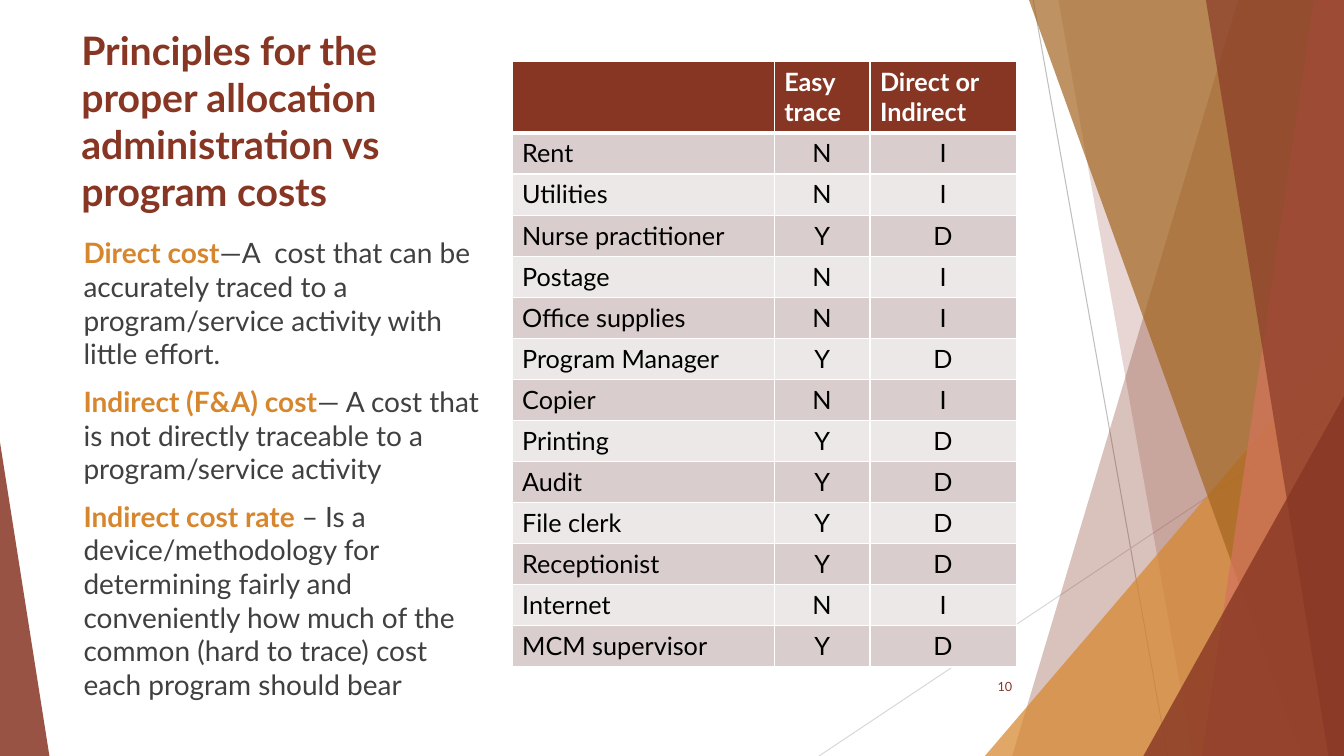
from dataclasses import dataclass

from lxml.etree import SubElement
from pptx import Presentation
from pptx.dml.color import RGBColor
from pptx.enum.shapes import MSO_CONNECTOR, MSO_SHAPE
from pptx.enum.text import MSO_ANCHOR, PP_ALIGN
from pptx.oxml.ns import qn
from pptx.util import Pt


@dataclass(frozen=True)
class Theme:
    """Colours, font and type sizes of the slide."""
    font: str = "Lato"
    brick: str = "873624"
    amber: str = "D6862D"
    bronze: str = "A36520"
    coral: str = "D4745E"
    text: str = "404040"
    black: str = "000000"
    white: str = "FFFFFF"
    odd_row: str = "D9CECD"
    even_row: str = "EDE8E8"
    steep_line: str = "BFBFBF"
    shallow_line: str = "D9D9D9"
    title_size: int = 28
    body_size: int = 20
    table_size: int = 18
    number_size: int = 9


@dataclass(frozen=True)
class Box:
    """A region of the slide in points."""
    left: float
    top: float
    width: float
    height: float

    @property
    def right(self):
        """Return the right edge."""
        return self.left + self.width

    @property
    def bottom(self):
        """Return the bottom edge."""
        return self.top + self.height

    def lengths(self):
        """Return the box as slide lengths."""
        return [Pt(value) for value in (self.left, self.top, self.width, self.height)]


THEME = Theme()
TITLE = "Principles for the proper allocation administration vs program costs"
DEFINITIONS = [
    ("Direct cost", "—A  cost that can be accurately traced to a program/service activity with little effort."),
    ("Indirect (F&A) cost", "— A cost that is not directly traceable to a program/service activity"),
    ("Indirect cost rate ", "– Is a device/methodology for determining fairly and conveniently how much "
     "of the common (hard to trace) cost each program should bear"),
]
HEADINGS = ["", "Easy\ntrace", "Direct or\nIndirect"]
COSTS = [
    ("Rent", "N", "I"), ("Utilities", "N", "I"), ("Nurse practitioner", "Y", "D"),
    ("Postage", "N", "I"), ("Office supplies", "N", "I"), ("Program Manager", "Y", "D"),
    ("Copier", "N", "I"), ("Printing", "Y", "D"), ("Audit", "Y", "D"), ("File clerk", "Y", "D"),
    ("Receptionist", "Y", "D"), ("Internet", "N", "I"), ("MCM supervisor", "Y", "D"),
]


def set_values(target, values):
    """Set each named attribute of the target."""
    for name, value in values.items():
        setattr(target, name, value)


def add_run(paragraph, text, size, color, bold=False):
    """Add one formatted run to a paragraph."""
    run = paragraph.add_run()
    set_values(run, {"text": text})
    set_values(run.font, {"name": THEME.font, "size": Pt(size), "bold": bold})
    run.font.color.rgb = RGBColor.from_string(color)


def add_text_frame(slide, box, anchor=MSO_ANCHOR.TOP):
    """Add a wrapping text box and return its frame."""
    frame = slide.shapes.add_textbox(*box.lengths()).text_frame
    set_values(frame, {"word_wrap": True, "vertical_anchor": anchor})
    return frame


def paint(shape, color, opacity):
    """Give a shape a translucent fill and no outline."""
    shape.shadow.inherit = False
    shape.fill.solid()
    shape.fill.fore_color.rgb = RGBColor.from_string(color)
    shape.line.fill.background()
    tint = shape.element.spPr.find(qn("a:solidFill"))[0]
    SubElement(tint, qn("a:alpha"), val=str(opacity * 1000))


def add_ray(slide, start, end, color):
    """Add one thin background line."""
    ray = slide.shapes.add_connector(MSO_CONNECTOR.STRAIGHT, *[Pt(value) for value in start + end])
    ray.line.width = Pt(0.75)
    ray.line.color.rgb = RGBColor.from_string(color)
    SubElement(ray._element.spPr, qn("a:effectLst"))


def add_facet(slide, box, top_inset, bottom_inset, color, opacity):
    """Add a full-height facet whose slanted left side is measured from the right edge."""
    corners = [(box.right - top_inset, box.top), (box.right, box.top),
               (box.right, box.bottom), (box.right - bottom_inset, box.bottom)]
    points = [(Pt(x), Pt(y)) for x, y in corners]
    builder = slide.shapes.build_freeform(*points[0], scale=1.0)
    builder.add_line_segments(points[1:], close=True)
    paint(builder.convert_to_shape(), color, opacity)


def add_corner(slide, box, width, height, apex, color, opacity):
    """Add a right triangle in a bottom corner, with its apex at the left (0) or right (1)."""
    left = box.left + apex * (box.width - width)
    corner = Box(left, box.bottom - height, width, height)
    shape = slide.shapes.add_shape(MSO_SHAPE.ISOSCELES_TRIANGLE, *corner.lengths())
    shape.adjustments[0] = apex
    paint(shape, color, opacity)


def add_scenery(slide, box):
    """Draw the background lines, facets and corner triangles."""
    add_ray(slide, (box.right - 222, box.top), (box.right - 126, box.bottom), THEME.steep_line)
    add_ray(slide, (box.right, box.bottom - 250), (box.right - 375, box.bottom), THEME.shallow_line)
    add_facet(slide, box, 75.6, 237, THEME.brick, 30)
    add_facet(slide, box, 204, 108, THEME.brick, 20)
    add_corner(slide, box, 256.5, 300, 1, THEME.amber, 72)
    add_facet(slide, box, 225, 30.5, THEME.bronze, 70)
    add_facet(slide, box, 21.6, 101.5, THEME.coral, 70)
    add_facet(slide, box, 98.6, 11, THEME.brick, 65)
    add_corner(slide, box, 143.3, 257, 1, THEME.brick, 80)
    add_corner(slide, box, 35.3, 224, 0, THEME.brick, 85)


def add_title(slide, box):
    """Add the slide title."""
    frame = add_text_frame(slide, box, MSO_ANCHOR.BOTTOM)
    add_run(frame.paragraphs[0], TITLE, THEME.title_size, THEME.brick, True)


def add_definitions(slide, box):
    """Add the three cost definitions."""
    frame = add_text_frame(slide, box)
    for index, (term, meaning) in enumerate(DEFINITIONS):
        paragraph = frame.add_paragraph() if index else frame.paragraphs[0]
        paragraph.space_before = Pt(10)
        add_run(paragraph, term, THEME.body_size, THEME.amber, True)
        add_run(paragraph, meaning, THEME.body_size, THEME.text)


def style_cell(cell, fill, bottom_width):
    """Set the white borders and the fill of a cell."""
    properties = cell._tc.get_or_add_tcPr()
    for side, width in {"L": 1, "R": 1, "T": 1, "B": bottom_width}.items():
        border = SubElement(properties, qn(f"a:ln{side}"), w=str(Pt(width)))
        SubElement(SubElement(border, qn("a:solidFill")), qn("a:srgbClr"), val=THEME.white)
    cell.fill.solid()
    cell.fill.fore_color.rgb = RGBColor.from_string(fill)


def add_cost_table(slide, box):
    """Add the table that classifies each cost."""
    rows = [HEADINGS, *COSTS]
    table = slide.shapes.add_table(len(rows), len(HEADINGS), *box.lengths()).table
    for column, share in zip(table.columns, (0.52, 0.19, 0.29)):
        column.width = Pt(box.width * share)
    header_height = 51
    row_height = (box.height - header_height) / len(COSTS)
    for row_index, values in enumerate(rows):
        header = row_index == 0
        table.rows[row_index].height = Pt(header_height if header else row_height)
        band = THEME.odd_row if row_index % 2 else THEME.even_row
        for column_index, value in enumerate(values):
            cell = table.cell(row_index, column_index)
            style_cell(cell, THEME.brick if header else band, 3 if header else 1)
            for line_index, line in enumerate(value.split("\n") if value else []):
                frame = cell.text_frame
                paragraph = frame.add_paragraph() if line_index else frame.paragraphs[0]
                centred = column_index and not header
                paragraph.alignment = PP_ALIGN.CENTER if centred else PP_ALIGN.LEFT
                add_run(paragraph, line, THEME.table_size, THEME.white if header else THEME.black, header)


def add_slide_number(slide, box):
    """Add the slide number."""
    paragraph = add_text_frame(slide, box, MSO_ANCHOR.MIDDLE).paragraphs[0]
    paragraph.alignment = PP_ALIGN.RIGHT
    add_run(paragraph, "10", THEME.number_size, THEME.brick)


def main():
    """Build and save the presentation."""
    presentation = Presentation()
    set_values(presentation, {"slide_width": Pt(960), "slide_height": Pt(540)})
    slide = presentation.slides.add_slide(presentation.slide_layouts[6])
    add_scenery(slide, Box(0, 0, 960, 540))
    add_title(slide, Box(51, 25, 304, 132))
    add_cost_table(slide, Box(365.8, 44, 360, 432.5))
    add_definitions(slide, Box(52.6, 165, 305.3, 354))
    add_slide_number(slide, Box(676, 476, 54, 28.8))
    presentation.save("out.pptx")


if __name__ == "__main__":
    main()
